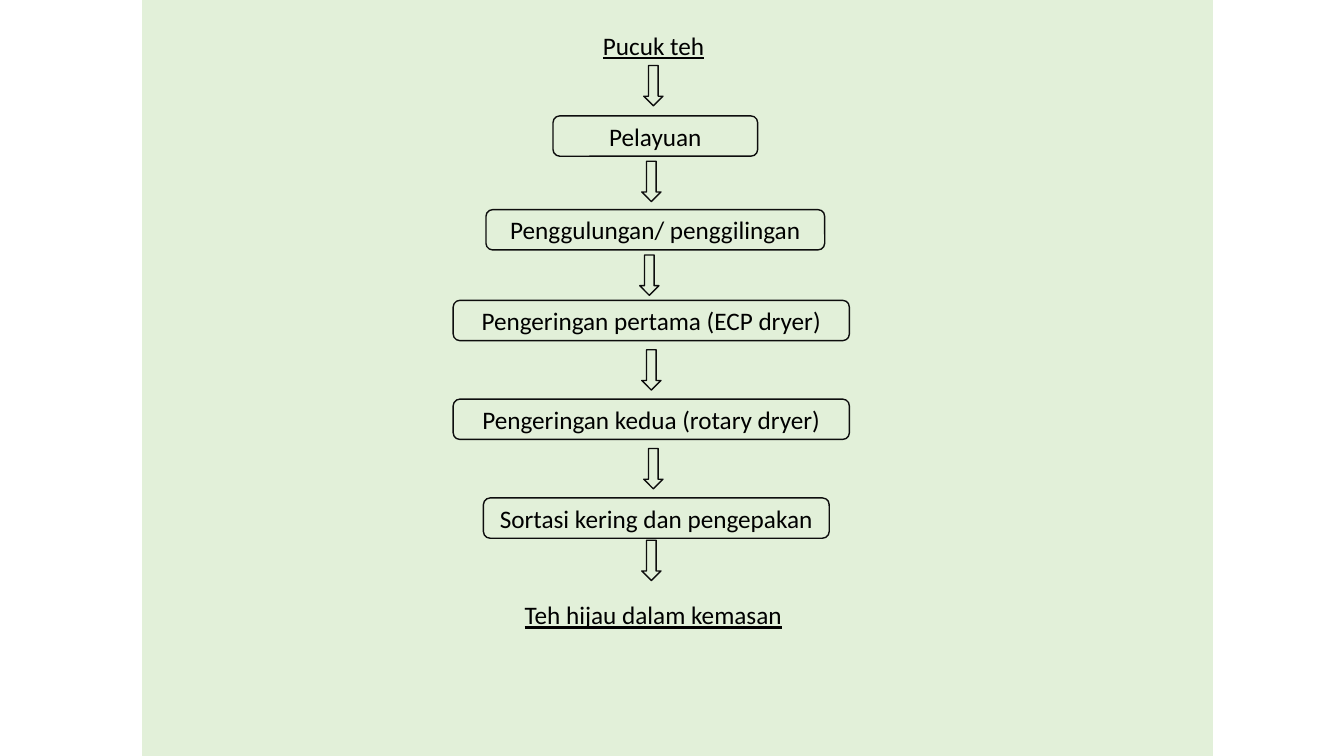
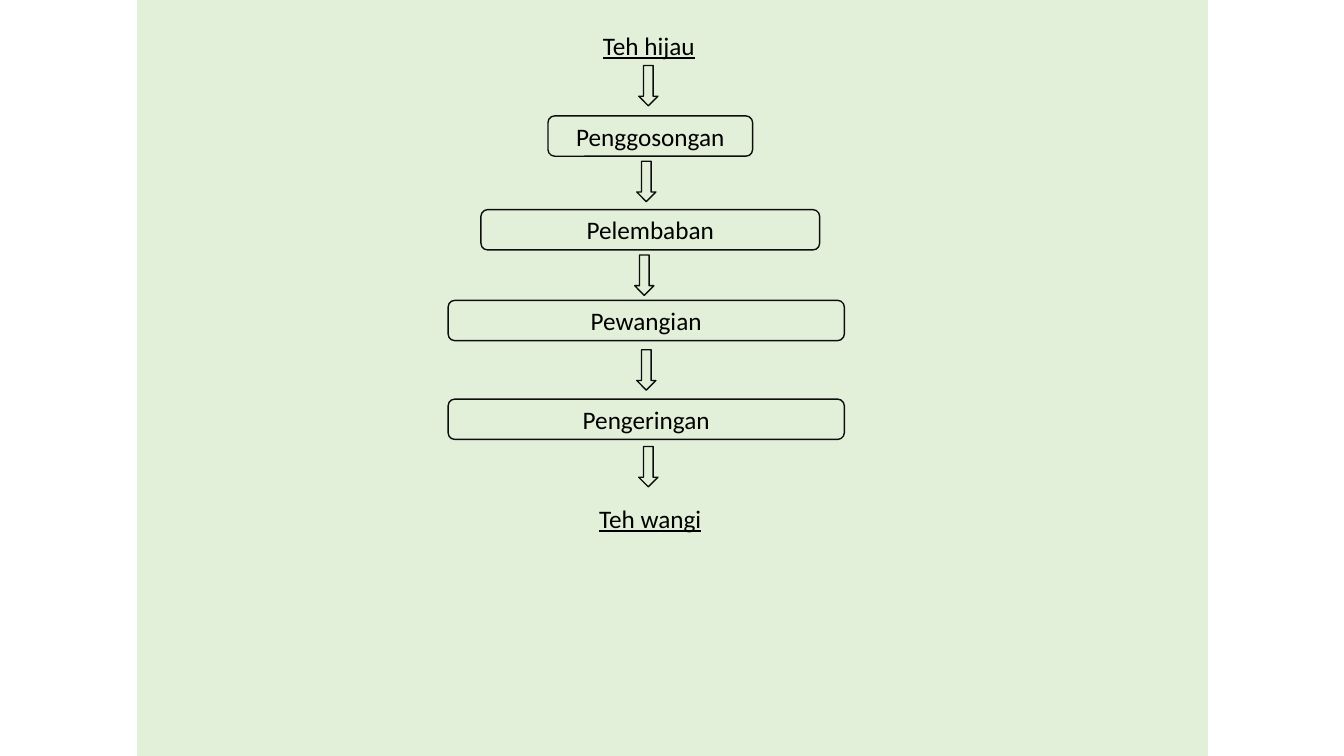
from dataclasses import dataclass

from pptx import Presentation
from pptx.dml.color import RGBColor
from pptx.enum.shapes import MSO_SHAPE
from pptx.enum.text import MSO_ANCHOR, PP_ALIGN
from pptx.util import Inches, Pt

RECTANGLE = MSO_SHAPE.RECTANGLE
ROUNDED = MSO_SHAPE.ROUNDED_RECTANGLE
DOWN_ARROW = MSO_SHAPE.DOWN_ARROW
LEFT = PP_ALIGN.LEFT
CENTER = PP_ALIGN.CENTER
MIDDLE = MSO_ANCHOR.MIDDLE
TOP = MSO_ANCHOR.TOP

PALE_GREEN = RGBColor(0xE2, 0xF0, 0xD9)
OUTLINE = RGBColor(0x0D, 0x0D, 0x0D)
BLACK = RGBColor(0, 0, 0)
FONT_NAME = "Calibri"
FONT_SIZE = 18

SLIDE_WIDTH, SLIDE_HEIGHT = 13.33, 7.5
PANEL_WIDTH = 10.62
PANEL_OFFSET = 5.05
ROW_HEIGHT = 0.4
ARROW_WIDTH = 0.19
START_LEFT, START_TOP = 5.88, 0.25


@dataclass(frozen=True)
class Stage:
    arrow_top: float
    arrow_shift: float
    top: float
    width: float
    shift: float


@dataclass(frozen=True)
class Flow:
    axis: float
    start: str
    start_width: float
    steps: tuple[str, ...]
    finish: str
    finish_stage: Stage


STAGES = (
    Stage(0.65, 0.02, 1.15, 2.03, 0.04),
    Stage(1.6, 0, 2.08, 3.36, 0.04),
    Stage(2.53, -0.02, 2.98, 3.93, 0),
    Stage(3.47, 0, 3.96, 3.93, 0),
    Stage(4.45, 0.02, 4.94, 3.43, 0.05),
)

FLOWS = (
    Flow(
        6.46, "Pucuk teh", 1.22,
        ("Pelayuan", "Penggulungan/ penggilingan", "Pengeringan pertama (ECP dryer)",
         "Pengeringan kedua (rotary dryer)", "Sortasi kering dan pengepakan"),
        "Teh hijau dalam kemasan", Stage(5.36, 0, 5.9, 2.97, 0.02),
    ),
    Flow(
        6.41, "Teh hijau", 1.12,
        ("Penggosongan", "Pelembaban", "Pewangian", "Pengeringan"),
        "Teh wangi", Stage(4.43, 0.02, 4.94, 2.97, 0.04),
    ),
)


def write_text(shape, text: str, alignment: PP_ALIGN, anchor: MSO_ANCHOR,
               underline: bool = False, wrap: bool = True) -> None:
    frame = shape.text_frame
    frame.text = text
    frame.word_wrap = wrap
    frame.vertical_anchor = anchor
    paragraph = frame.paragraphs[0]
    paragraph.alignment = alignment
    font = paragraph.font
    font.name = FONT_NAME
    font.size = Pt(FONT_SIZE)
    font.color.rgb = BLACK
    font.underline = underline


def add_shape(slide, kind: MSO_SHAPE, left: float, top: float, width: float,
              height: float, fill: RGBColor | None = None, outlined: bool = True):
    shape = slide.shapes.add_shape(
        kind, Inches(left), Inches(top), Inches(width), Inches(height))
    shape.shadow.inherit = False
    if fill is None:
        shape.fill.background()
    else:
        shape.fill.solid()
        shape.fill.fore_color.rgb = fill
    if outlined:
        shape.line.color.rgb = OUTLINE
        shape.line.width = Pt(1)
    else:
        shape.line.fill.background()
    return shape


def add_panel(slide, axis: float) -> None:
    panel = add_shape(slide, RECTANGLE, axis - PANEL_OFFSET, 0,
                      PANEL_WIDTH, SLIDE_HEIGHT, PALE_GREEN, outlined=False)
    title_element = slide.shapes.title.element
    title_element.addprevious(panel.element)


def add_start(slide, flow: Flow) -> None:
    title = slide.shapes.title
    title.left, title.top = Inches(START_LEFT), Inches(START_TOP)
    title.width, title.height = Inches(flow.start_width), Inches(ROW_HEIGHT)
    write_text(title, flow.start, LEFT, TOP, underline=True, wrap=False)


def add_stage(slide, axis: float, stage: Stage, text: str, final: bool = False) -> None:
    add_shape(slide, DOWN_ARROW, axis + stage.arrow_shift - ARROW_WIDTH / 2,
              stage.arrow_top, ARROW_WIDTH, ROW_HEIGHT)
    box = add_shape(slide, ROUNDED, axis + stage.shift - stage.width / 2,
                    stage.top, stage.width, ROW_HEIGHT, outlined=not final)
    write_text(box, text, CENTER, MIDDLE, underline=final)


def add_flow(presentation, flow: Flow) -> None:
    slide = presentation.slides.add_slide(
        presentation.slide_layouts.get_by_name("Title Only"))
    add_panel(slide, flow.axis)
    add_start(slide, flow)
    for stage, text in zip(STAGES, flow.steps):
        add_stage(slide, flow.axis, stage, text)
    add_stage(slide, flow.axis, flow.finish_stage, flow.finish, final=True)


def main() -> None:
    presentation = Presentation()
    presentation.slide_width = Inches(SLIDE_WIDTH)
    presentation.slide_height = Inches(SLIDE_HEIGHT)
    for flow in FLOWS:
        add_flow(presentation, flow)
    presentation.save("out.pptx")


if __name__ == "__main__":
    main()
